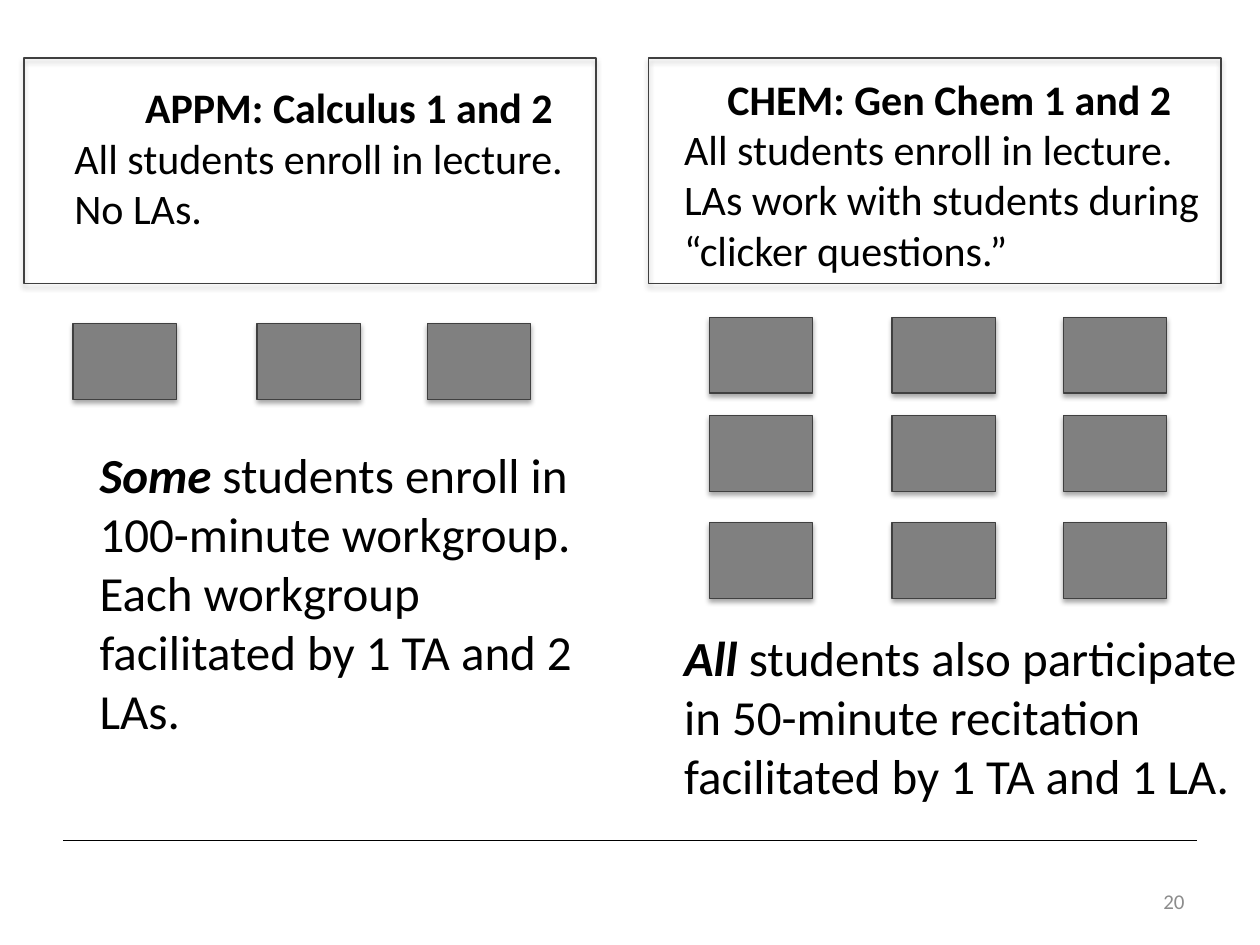
from lxml import etree
from pptx import Presentation
from pptx.dml.color import RGBColor
from pptx.enum.shapes import MSO_CONNECTOR, MSO_SHAPE
from pptx.enum.text import MSO_ANCHOR as Anchor, PP_ALIGN as Align
from pptx.oxml import parse_xml
from pptx.oxml.ns import nsdecls, qn
from pptx.util import Inches, Pt

BLACK = RGBColor(0x00, 0x00, 0x00)
OUTLINE = RGBColor(0x40, 0x40, 0x40)
SECTION = RGBColor(0x80, 0x80, 0x80)
MUTED = RGBColor(0x8C, 0x8C, 0x8C)

SHADOW = (
    f'<a:outerShdw {nsdecls("a")} blurRad="{Pt(3.1)}" dist="{Pt(1.8)}" '
    'dir="5400000" rotWithShape="0"><a:srgbClr val="000000">'
    '<a:alpha val="35000"/></a:srgbClr></a:outerShdw>'
)


class CoursePage:
    font_name = "Calibri"

    def __init__(self, page):
        self.page = page

    def rule(self, left, right, y):
        line = self.page.shapes.add_connector(
            MSO_CONNECTOR.STRAIGHT, Inches(left), Inches(y), Inches(right), Inches(y))
        line.line.color.rgb = BLACK
        line.line.width = Pt(0.5)
        etree.SubElement(line._element.spPr, qn("a:effectLst"))

    def rectangle(self, left, top, width, height, fill=None):
        shape = self.page.shapes.add_shape(
            MSO_SHAPE.RECTANGLE, Inches(left), Inches(top), Inches(width), Inches(height))
        if fill is None:
            shape.fill.background()
        else:
            shape.fill.solid()
            shape.fill.fore_color.rgb = fill
        shape.line.color.rgb = OUTLINE
        shape.line.width = Pt(0.75)
        shape.shadow.inherit = False
        shape._element.spPr.find(qn("a:effectLst")).append(parse_xml(SHADOW))

    def sections(self, lefts, tops):
        for top in tops:
            for left in lefts:
                self.rectangle(left, top, 0.82, 0.6, SECTION)

    def text_frame(self, left, top, width, height):
        box = self.page.shapes.add_textbox(
            Inches(left), Inches(top), Inches(width), Inches(height))
        frame = box.text_frame
        frame.word_wrap = True
        return frame

    def style(self, font, size, color=BLACK):
        font.name = self.font_name
        font.size = Pt(size)
        font.color.rgb = color

    def indented_text(self, left, top, width, height, size, paragraphs):
        """Each paragraph is (bold, italic, alignment, bold lead, plain rest)."""
        frame = self.text_frame(left, top, width, height)
        frame.margin_left = frame.margin_right = Inches(0.05)
        frame.margin_top = frame.margin_bottom = Inches(0.02)
        for index, (lead, rest, align) in enumerate(paragraphs):
            para = frame.add_paragraph() if index else frame.paragraphs[0]
            para._p.get_or_add_pPr().set("marL", str(Inches(0.62)))
            para.alignment = align
            self.style(para.font, size)
            if lead:
                span = para.add_run()
                span.text = lead
                span.font.bold = True
                span.font.italic = bool(rest)
            if rest:
                para.add_run().text = rest

    def course(self, left, top, width, height, title, *lines):
        self.indented_text(
            left, top, width, height, 24,
            [(title, "", Align.CENTER)] + [("", line, Align.LEFT) for line in lines])

    def note(self, left, top, width, height, lead, rest):
        self.indented_text(left, top, width, height, 28, [(lead, rest, Align.LEFT)])

    def page_number(self, number):
        frame = self.text_frame(7.17, 6.95, 2.33, 0.4)
        frame.vertical_anchor = Anchor.MIDDLE
        para = frame.paragraphs[0]
        para.text = number
        para.alignment = Align.RIGHT
        self.style(para.font, 12, MUTED)


def main():
    deck = Presentation()
    deck.slide_width, deck.slide_height = Inches(10), Inches(7.5)
    page = CoursePage(deck.slides.add_slide(deck.slide_layouts[6]))

    # Footer
    page.rule(0.5, 9.5, 6.67)
    page.page_number("20")

    # Course headers
    for left in (0.19, 5.15):
        page.rectangle(left, 0.46, 4.54, 1.79)
    page.course(-0.08, 0.63, 5.08, 1.26, "APPM: Calculus 1 and 2",
                "All students enroll in lecture.", "No LAs.")
    page.course(4.76, 0.56, 4.93, 1.66, "CHEM: Gen Chem 1 and 2",
                "All students enroll in lecture. LAs work with students during "
                "“clicker questions.”")

    # Small-group sections
    page.sections((0.58, 2.04, 3.39), (2.57,))
    page.sections((5.63, 7.08, 8.44), (2.52, 3.3, 4.15))

    # Notes on the sections
    page.note(0.12, 3.51, 4.61, 2.4, "Some",
              " students enroll in 100-minute workgroup. Each workgroup "
              "facilitated by 1 TA and 2 LAs.")
    page.note(4.76, 4.96, 5.24, 1.46, "All ",
              "students also participate in 50-minute recitation "
              "facilitated by 1 TA and 1 LA.")

    deck.save("out.pptx")


if __name__ == "__main__":
    main()
